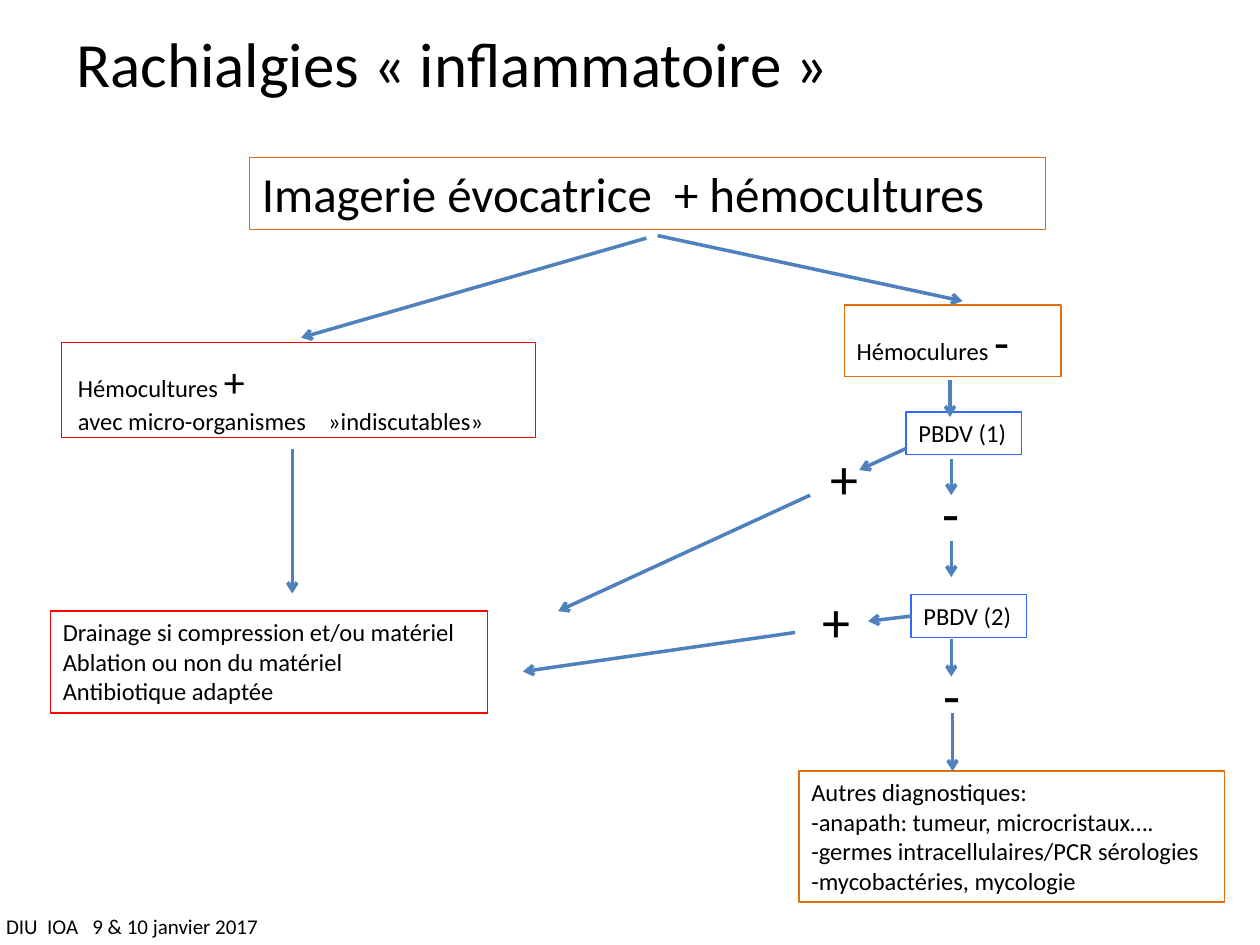
from dataclasses import dataclass

import pptx
import pptx.dml.color
import pptx.enum.shapes
import pptx.enum.text
import pptx.oxml
import pptx.oxml.ns
import pptx.util

Inches = pptx.util.Inches
Pt = pptx.util.Pt


@dataclass(frozen=True)
class Theme:
    font: str = "Calibri"
    text: str = "000000"
    arrow: str = "4F81BD"
    treatment: str = "FF0000"
    pathway: str = "E46C0A"
    biopsy: str = "3366FF"
    footer_size: int = 12
    body_size: int = 14
    spacer_size: int = 18
    plus_size: int = 24
    heading_size: int = 28
    sign_size: int = 32
    title_size: int = 36
    border_width: float = 0.75
    arrow_width: float = 2


THEME = Theme()


def rgb(value):
    return pptx.dml.color.RGBColor.from_string(value)


def write_text(shape, paragraphs, align=pptx.enum.text.PP_ALIGN.LEFT,
               anchor=pptx.enum.text.MSO_ANCHOR.TOP):
    """Fill a shape with paragraphs, each a list of (text, size) runs."""
    frame = shape.text_frame
    frame.word_wrap = True
    frame.vertical_anchor = anchor
    for index, runs in enumerate(paragraphs):
        paragraph = frame.paragraphs[0] if index == 0 else frame.add_paragraph()
        paragraph.alignment = align
        for text, size in runs:
            run = paragraph.add_run()
            run.text = text
            run.font.name = THEME.font
            run.font.size = Pt(size)
            run.font.color.rgb = rgb(THEME.text)


def body_lines(*lines):
    return [[(line, THEME.body_size)] for line in lines]


def add_label(slide, bounds, paragraphs, **layout):
    label = slide.shapes.add_textbox(*map(Inches, bounds))
    write_text(label, paragraphs, **layout)
    return label


def add_box(slide, bounds, color, paragraphs=()):
    box = slide.shapes.add_shape(
        pptx.enum.shapes.MSO_SHAPE.RECTANGLE, *map(Inches, bounds))
    box.shadow.inherit = False
    box.fill.background()
    box.line.color.rgb = rgb(color)
    box.line.width = Pt(THEME.border_width)
    write_text(box, paragraphs)
    return box


def add_arrow(slide, start, end):
    arrow = slide.shapes.add_connector(
        pptx.enum.shapes.MSO_CONNECTOR.STRAIGHT, *map(Inches, start + end))
    arrow.line.color.rgb = rgb(THEME.arrow)
    arrow.line.width = Pt(THEME.arrow_width)
    line = arrow.line._get_or_add_ln()
    head = pptx.oxml.parse_xml(
        f'<a:tailEnd {pptx.oxml.ns.nsdecls("a")} type="arrow"/>')
    line.append(head)
    arrow._element.spPr.append(
        pptx.oxml.parse_xml(f'<a:effectLst {pptx.oxml.ns.nsdecls("a")}/>'))
    return arrow


def add_headings(slide):
    add_label(slide, (-0.05, 7.2, 2.23, 0.3),
              [[("DIU  IOA   9 & 10 janvier 2017", THEME.footer_size)]])
    add_label(slide, (-0.12, 0.07, 7.42, 0.85),
              [[("Rachialgies « inflammatoire »", THEME.title_size)]],
              align=pptx.enum.text.PP_ALIGN.CENTER,
              anchor=pptx.enum.text.MSO_ANCHOR.MIDDLE)
    add_box(slide, (1.98, 1.25, 6.32, 0.57), THEME.pathway,
            [[("Imagerie évocatrice  + hémocultures", THEME.heading_size)]])


def add_positive_branch(slide):
    add_label(slide, (0.52, 2.77, 3.62, 0.98), [
        [("Hémocultures ", THEME.body_size), ("+", THEME.plus_size),
         (" ", THEME.spacer_size)],
        [("avec micro-organismes    »indiscutables»", THEME.body_size)],
    ])
    add_box(slide, (0.49, 2.72, 3.76, 0.75), THEME.treatment)
    add_box(slide, (0.4, 4.85, 3.47, 0.81), THEME.treatment, body_lines(
        "Drainage si compression et/ou matériel",
        "Ablation ou non du matériel",
        "Antibiotique adaptée"))


def add_negative_branch(slide):
    """Add the right-hand boxes and return the second biopsy box."""
    add_box(slide, (6.7, 2.42, 1.72, 0.57), THEME.pathway,
            [[("Hémoculures ", THEME.body_size), ("-", THEME.heading_size)]])
    add_box(slide, (7.19, 3.27, 0.92, 0.34), THEME.biopsy, body_lines("PBDV (1)"))
    second_biopsy = add_box(slide, (7.23, 4.72, 0.92, 0.34), THEME.biopsy,
                            body_lines("PBDV (2)"))
    add_box(slide, (6.34, 6.12, 3.38, 1.04), THEME.pathway, body_lines(
        "Autres diagnostiques:",
        "-anapath: tumeur, microcristaux….",
        "-germes intracellulaires/PCR sérologies",
        "-mycobactéries, mycologie"))
    for sign, left, top, width in (("+", 6.49, 3.47, 0.34), ("-", 7.38, 3.75, 0.29),
                                   ("+", 6.43, 4.61, 0.34), ("-", 7.39, 5.19, 0.29)):
        add_label(slide, (left, top, width, 0.64), [[(sign, THEME.sign_size)]])
    return second_biopsy


def add_arrows(slide, second_biopsy):
    for start, end in (
        ((5.13, 1.89), (2.39, 2.68)),
        ((5.22, 1.87), (7.64, 2.39)),
        ((2.32, 3.56), (2.32, 4.71)),
        ((7.19, 3.56), (6.82, 3.73)),
        ((6.43, 3.93), (4.43, 4.85)),
        ((6.31, 5.02), (4.15, 5.33)),
    ):
        add_arrow(slide, start, end)
    for x, top, bottom in ((7.54, 3.02, 3.31), (7.55, 3.64, 3.93),
                           (7.55, 4.29, 4.58), (7.55, 5.07, 5.37),
                           (7.56, 5.66, 6.12)):
        add_arrow(slide, (x, top), (x, bottom))
    positive_result = add_arrow(slide, (7.23, 4.89), (6.89, 4.93))
    positive_result.begin_connect(second_biopsy, 1)


def main():
    presentation = pptx.Presentation()
    presentation.slide_width = Inches(10)
    presentation.slide_height = Inches(7.5)
    slide = presentation.slides.add_slide(presentation.slide_layouts[6])
    add_headings(slide)
    add_positive_branch(slide)
    second_biopsy = add_negative_branch(slide)
    add_arrows(slide, second_biopsy)
    presentation.save("out.pptx")


if __name__ == "__main__":
    main()
